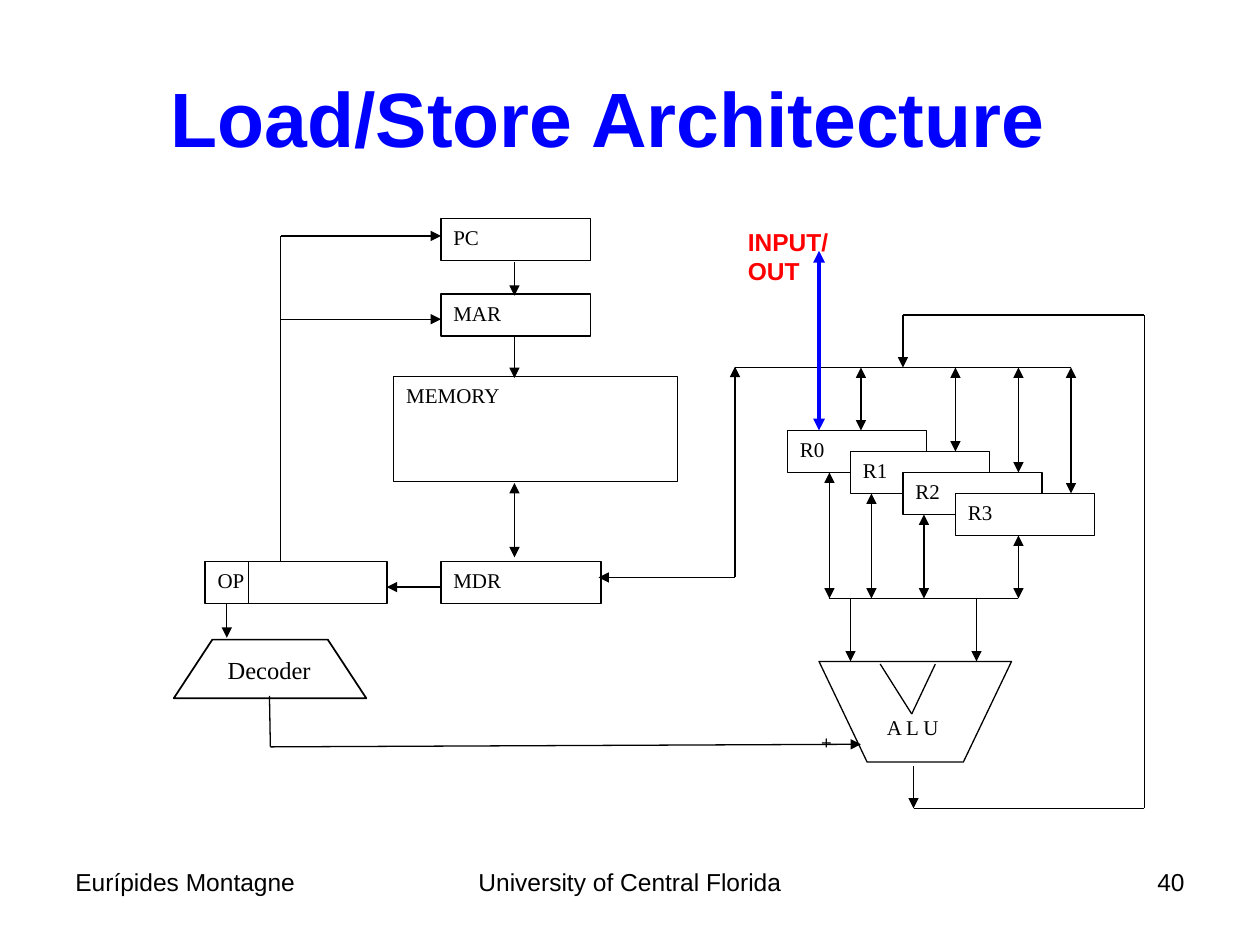
import dataclasses
import pptx
import pptx.dml.color
import pptx.enum.shapes
import pptx.enum.text
import pptx.oxml
import pptx.oxml.ns
import pptx.util

Pt = pptx.util.Pt
Kind = pptx.enum.shapes.MSO_SHAPE
Align = pptx.enum.text.PP_ALIGN
Anchor = pptx.enum.text.MSO_ANCHOR


@dataclasses.dataclass(frozen=True)
class Theme:
    """Hold the colours, fonts, type sizes and line widths."""
    ink: str = "000000"
    paper: str = "FFFFFF"
    blue: str = "0000FF"
    red: str = "FF0000"
    sans: str = "Arial"
    serif: str = "Times New Roman"
    title: int = 44
    sign: int = 18
    body: int = 14
    label: int = 12
    thin: float = 0.75
    mid: float = 1
    thick: float = 2.25


@dataclasses.dataclass(frozen=True)
class Box:
    """Hold a frame in points."""
    x: float
    y: float
    w: float
    h: float

    def inner(self, x, y, w, h):
        """Return a frame placed relative to this one."""
        return Box(self.x + x, self.y + y, w, h)

    def place(self):
        """Return left, top, width and height as lengths."""
        return Pt(self.x), Pt(self.y), Pt(self.w), Pt(self.h)


THEME = Theme()


def paint(code):
    """Turn a hex code into a colour."""
    return pptx.dml.color.RGBColor.from_string(code)


def write(shape, text, size, face=THEME.sans, hue=THEME.ink, bold=False,
          align=Align.LEFT, anchor=Anchor.TOP, wrap=True):
    """Set and format the text of a shape."""
    frame = shape.text_frame
    frame.text = text
    frame.word_wrap = wrap
    frame.vertical_anchor = anchor
    para = frame.paragraphs[0]
    para.alignment = align
    font = para.runs[0].font
    font.size, font.name, font.bold = Pt(size), face, bold
    font.color.rgb = paint(hue)
    return frame


def note(slide, box, text, size, **looks):
    """Add a text box."""
    return write(slide.shapes.add_textbox(*box.place()), text, size, **looks)


def style(shape, width=THEME.thin):
    """Give a shape a white fill and a plain black outline."""
    shape.shadow.inherit = False
    shape.fill.solid()
    shape.fill.fore_color.rgb = paint(THEME.paper)
    shape.line.color.rgb = paint(THEME.ink)
    shape.line.width = Pt(width)


def cell(slide, box, text):
    """Add a labelled hardware block."""
    shape = slide.shapes.add_shape(Kind.RECTANGLE, *box.place())
    style(shape)
    write(shape, text, THEME.label, face=THEME.serif)


def wire(slide, box, start, end, tips="", hue=THEME.ink, width=THEME.thin):
    """Add a line with arrowheads at the ends named in tips."""
    line = slide.shapes.add_connector(
        pptx.enum.shapes.MSO_CONNECTOR.STRAIGHT,
        Pt(box.x + start[0]), Pt(box.y + start[1]),
        Pt(box.x + end[0]), Pt(box.y + end[1]))
    line.line.color.rgb = paint(hue)
    line.line.width = Pt(width)
    props = line._element.spPr
    pen = props.find(pptx.oxml.ns.qn("a:ln"))
    for tag in tips.split():
        tip = pptx.oxml.ns.qn("a:" + tag)
        pen.append(pen.makeelement(tip, {"type": "triangle"}))
    props.append(props.makeelement(pptx.oxml.ns.qn("a:effectLst"), {}))


ONE = "tailEnd"
BACK = "headEnd"
BOTH = "headEnd tailEnd"


def head(slide, box):
    """Place the slide title."""
    shape = slide.shapes.title
    shape.left, shape.top, shape.width, shape.height = box.place()
    frame = write(shape, "Load/Store Architecture", THEME.title, hue=THEME.blue,
                  bold=True, align=Align.CENTER, anchor=Anchor.MIDDLE)
    frame.margin_right = Pt(32)


def foot(slide, box):
    """Place the author, school and page number."""
    side, mid = 168, 228
    note(slide, box.inner(0, 0, side, box.h), "Eurípides Montagne", THEME.body)
    note(slide, box.inner((box.w - mid) / 2, 0, mid, box.h),
         "University of Central Florida", THEME.body, align=Align.CENTER)
    note(slide, box.inner(box.w - side, 0, side, box.h), "40", THEME.body,
         align=Align.RIGHT)


def fetch(slide, box):
    """Draw the memory path, the opcode and the decoder."""
    for text, spot in (("PC", (153, 0, 85.5, 24)), ("MAR", (153, 43, 85.5, 24)),
                       ("MEMORY", (126, 90.2, 162, 60)),
                       ("MDR", (153, 196, 91.5, 24)), ("OP", (18.2, 196, 104, 24))):
        cell(slide, box.inner(*spot), text)
    gate = slide.shapes.add_shape(Kind.FLOWCHART_MANUAL_OPERATION,
                                  *box.inner(0.3, 240.5, 110, 33.5).place())
    gate.rotation = 180
    style(gate, THEME.mid)
    note(slide, box.inner(24, 245.6, 66, 24.5), "Decoder", THEME.body,
         face=THEME.serif)
    for start, end, tips in (
            ((195, 25), (195, 44), ONE), ((195, 67), (195, 91), ONE),
            ((195, 193.5), (195, 151), BOTH), ((153.5, 210.5), (122, 210.5), ONE),
            ((61.4, 196), (61.4, 9.6), ""), ((61.4, 9.8), (153, 9.8), ONE),
            ((61.4, 57.4), (153, 57.4), ONE), ((43, 196), (43, 220), ""),
            ((30.6, 220), (30.6, 239.5), ONE)):
        wire(slide, box, start, end, tips)


def bank(slide, box):
    """Draw the registers, both buses and the input and output port."""
    top, base = 84, 216
    note(slide, box.inner(0.3, 0, 80, 41), "INPUT/OUT", THEME.body,
         hue=THEME.red, bold=True)
    ports = zip((30, 66, 96, 126), (72, 126, 162, 192), (54, 78, 108, 162))
    for i, (left, above, below) in enumerate(ports):
        y = 120 + 12 * i
        cell(slide, box.inner(left, y, 79.5, 24), f"R{i}")
        wire(slide, box, (above, top), (above, y), BOTH)
        wire(slide, box, (below, y + 24), (below, base), BOTH)
    wire(slide, box, (0, top), (192, top))
    wire(slide, box, (54, base), (162, base))
    wire(slide, box, (48, 120), (48, 17.3), BOTH, THEME.blue, THEME.thick)


def unit(slide, box):
    """Draw the arithmetic unit with its inputs."""
    top, low, cut = 36, box.h, 27.5
    build = slide.shapes.build_freeform(Pt(box.x), Pt(box.y + top), scale=1.0)
    build.add_line_segments([(Pt(box.x + x), Pt(box.y + y)) for x, y in (
        (cut, low), (box.w - cut, low), (box.w, top))], close=True)
    shape = build.convert_to_shape()
    style(shape)
    frame = write(shape, "A L U", THEME.label, face=THEME.serif, align=Align.CENTER)
    frame.margin_top, frame.margin_bottom = Pt(30.5), 0
    frame.margin_right = Pt(10)
    for x in (18, 90):
        wire(slide, box, (x, 0), (x, top), ONE)
    for x in (35, 66.5):
        wire(slide, box, (x, 37.5), (53, 66))
    sign = note(slide, box.inner(-5.8, 60, 20, 31.5), "+", THEME.sign, wrap=False)
    sign.paragraphs[0].runs[0]._r.get_or_add_rPr().set("baseline", "-25000")


def links(slide, box):
    """Draw the wires that join the regions."""
    for start, end, tips in (
            ((154, 397.7), (154.5, 426.6), ""), ((154.5, 426.8), (492, 425.3), ONE),
            ((342, 330), (420, 330), BACK), ((420, 330), (420, 209.5), ONE),
            ((522, 438), (522, 462), ONE), ((522, 462), (654, 462), ""),
            ((654, 462), (654, 180), ""), ((654, 180), (516, 180), ""),
            ((516, 180), (516, 210), ONE)):
        wire(slide, box, start, end, tips)


def main():
    """Build and save the slide."""
    deck = pptx.Presentation()
    deck.slide_width, deck.slide_height = Pt(720), Pt(540)
    slide = deck.slides.add_slide(deck.slide_layouts[5])
    head(slide, Box(36, 21.6, 648, 90))
    foot(slide, Box(36, 492, 648, 37.5))
    fetch(slide, Box(99, 125, 288, 274))
    bank(slide, Box(420, 126, 206, 216))
    unit(slide, Box(468, 342, 110, 93.5))
    links(slide, Box(0, 0, 720, 540))
    deck.save("out.pptx")


if __name__ == "__main__":
    main()
